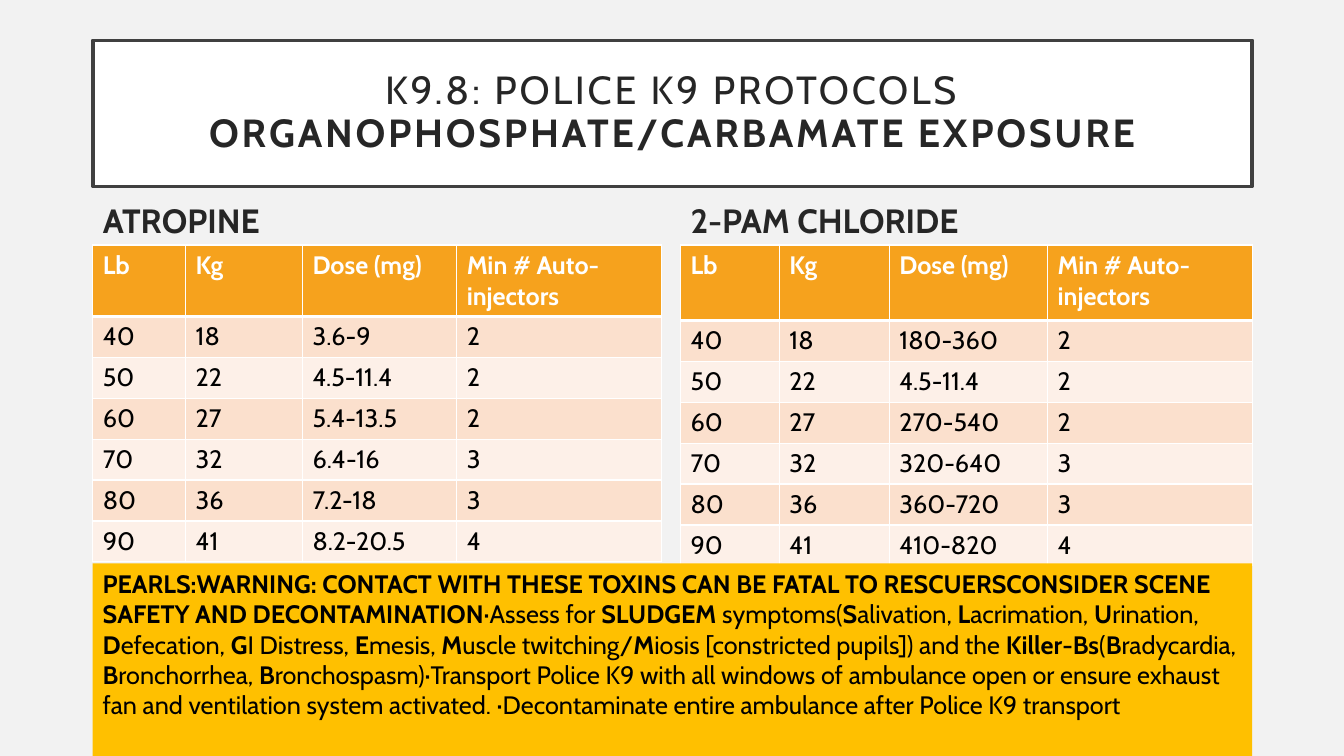
from copy import deepcopy
from dataclasses import dataclass

from lxml.etree import SubElement
from pptx import Presentation
from pptx.dml.color import RGBColor
from pptx.enum.shapes import MSO_SHAPE
from pptx.enum.text import MSO_ANCHOR as Anchor, MSO_AUTO_SIZE as AutoSize, PP_ALIGN as Align
from pptx.oxml.ns import qn
from pptx.util import Inches, Pt

WHITE = RGBColor(0xFF, 0xFF, 0xFF)
BLACK = RGBColor(0x00, 0x00, 0x00)
PALE_GREY = RGBColor(0xF2, 0xF2, 0xF2)
DARK_GREY = RGBColor(0x40, 0x40, 0x40)
INK = RGBColor(0x26, 0x26, 0x26)
ORANGE = RGBColor(0xF6, 0xA2, 0x1D)
AMBER = RGBColor(0xFF, 0xC0, 0x00)
BANDS = RGBColor(0xFB, 0xE0, 0xCD), RGBColor(0xFD, 0xF0, 0xE8)

LEFT, FULL_WIDTH = 0.92, 11.5
HEADING_TOP, HEADING_HEIGHT = 1.84, 0.59
TABLE_TOP, ROW_HEIGHT = 2.43, 0.4

TITLE_FORMAT = {"name": "Cabin", "size": Pt(28)}
HEADING_FORMAT = {"name": "Cabin", "size": Pt(24), "bold": True}
TEXT_FORMAT = {"name": "Cabin", "size": Pt(18)}

HEADER = ("Lb", "Kg", "Dose (mg)", "Min # Auto-injectors")
WEIGHTS = (("40", "18"), ("50", "22"), ("60", "27"), ("70", "32"), ("80", "36"), ("90", "41"))
INJECTORS = ("2", "2", "2", "3", "3", "4")

# Bold passages stand between asterisks
PEARLS = (
    "*PEARLS:WARNING: CONTACT WITH THESE TOXINS CAN BE FATAL TO RESCUERSCONSIDER SCENE "
    "SAFETY AND DECONTAMINATION*·Assess for *SLUDGEM *symptoms(*S*alivation, *L*acrimation, "
    "*U*rination, *D*efecation, *G*I Distress, *E*mesis, *M*uscle twitching/*M*iosis "
    "[constricted pupils]) and the *Killer-Bs*(*B*radycardia, *B*ronchorrhea, "
    "*B*ronchospasm)·Transport Police K9 with all windows of ambulance open or ensure exhaust "
    "fan and ventilation system activated. ·Decontaminate entire ambulance after Police K9 "
    "transport"
)


@dataclass(frozen=True)
class Drug:
    name: str
    placeholder: int
    left: float
    columns: tuple[float, ...]
    header_height: float
    doses: tuple[str, ...]


DRUGS = (
    Drug("ATROPINE", 1, LEFT, (0.92, 1.16, 1.53, 2.03), 0.7,
         ("3.6-9", "4.5-11.4", "5.4-13.5", "6.4-16", "7.2-18", "8.2-20.5")),
    Drug("2-PAM CHLORIDE", 3, 6.75, (0.98, 1.09, 1.57, 2.03), 0.75,
         ("180-360", "4.5-11.4", "270-540", "320-640", "360-720", "410-820")),
)


def place(shape, left: float, top: float, width: float, height: float) -> None:
    shape.left, shape.top = Inches(left), Inches(top)
    shape.width, shape.height = Inches(width), Inches(height)


def add_text(paragraph, text: str, color: RGBColor, formats: dict, bold: bool = False):
    run = paragraph.add_run()
    run.text = text
    for name, value in ({"bold": bold} | formats).items():
        setattr(run.font, name, value)
    run.font.color.rgb = color
    return run


def set_frame(frame, anchor: Anchor) -> None:
    for name, value in {"word_wrap": True, "auto_size": AutoSize.NONE,
                        "vertical_anchor": anchor}.items():
        setattr(frame, name, value)


def add_borders(cell, bottom: float) -> None:
    properties = cell._tc.get_or_add_tcPr()
    for side, width in (("L", 1), ("R", 1), ("T", 1), ("B", bottom)):
        line = SubElement(properties, qn(f"a:ln{side}"), w=str(Pt(width)))
        SubElement(SubElement(line, qn("a:solidFill")), qn("a:srgbClr"), val=str(WHITE))


def draw_title(slide) -> None:
    title = slide.shapes.title
    place(title, LEFT, 0.4, FULL_WIDTH, 1.45)
    title.fill.solid()
    title.fill.fore_color.rgb = WHITE
    title.line.color.rgb = DARK_GREY
    title.line.width = Pt(2.5)
    frame = title.text_frame
    set_frame(frame, Anchor.MIDDLE)
    for side in ("left", "right", "top", "bottom"):
        setattr(frame, f"margin_{side}", Inches(0.2))
    paragraph = frame.paragraphs[0]
    paragraph.alignment = Align.CENTER
    paragraph.line_spacing = 0.9
    first = add_text(paragraph, "K9.8: POLICE K9 PROTOCOLS", INK, TITLE_FORMAT)
    paragraph.add_line_break()
    second = add_text(paragraph, "ORGANOPHOSPHATE/CARBAMATE EXPOSURE", INK, TITLE_FORMAT, True)
    for run in (first, second):
        run.font._element.set("spc", "200")
    # The line break takes the size of the text around it
    paragraph._p.find(qn("a:br")).insert(0, deepcopy(first.font._element))


def draw_heading(slide, drug: Drug) -> None:
    heading = slide.placeholders[drug.placeholder]
    place(heading, drug.left, HEADING_TOP, sum(drug.columns), HEADING_HEIGHT)
    set_frame(heading.text_frame, Anchor.BOTTOM)
    paragraph = heading.text_frame.paragraphs[0]
    paragraph.space_before = Pt(0)
    add_text(paragraph, drug.name, INK, HEADING_FORMAT)


def draw_table(slide, drug: Drug) -> None:
    rows = [HEADER] + [(*weight, dose, count)
                       for weight, dose, count in zip(WEIGHTS, drug.doses, INJECTORS)]
    heights = [drug.header_height] + [ROW_HEIGHT] * len(WEIGHTS)
    table = slide.shapes.add_table(
        len(rows), len(HEADER), Inches(drug.left), Inches(TABLE_TOP),
        Inches(sum(drug.columns)), Inches(sum(heights))).table
    for column, width in zip(table.columns, drug.columns):
        column.width = Inches(width)
    for index, (values, height) in enumerate(zip(rows, heights)):
        is_header = index == 0
        table.rows[index].height = Inches(height)
        for cell, value in zip(table.rows[index].cells, values):
            add_borders(cell, 3 if is_header else 1)
            cell.fill.solid()
            cell.fill.fore_color.rgb = ORANGE if is_header else BANDS[(index - 1) % 2]
            add_text(cell.text_frame.paragraphs[0], value,
                     WHITE if is_header else BLACK, TEXT_FORMAT, is_header)


def draw_pearls(slide) -> None:
    box = slide.shapes.add_shape(MSO_SHAPE.RECTANGLE, Inches(LEFT), Inches(5.59),
                                 Inches(FULL_WIDTH), Inches(1.91))
    box.shadow.inherit = False
    box.fill.solid()
    box.fill.fore_color.rgb = AMBER
    box.line.fill.background()
    set_frame(box.text_frame, Anchor.TOP)
    paragraph = box.text_frame.paragraphs[0]
    paragraph.alignment = Align.LEFT
    for index, passage in enumerate(PEARLS.split("*")):
        if passage:
            add_text(paragraph, passage, BLACK, TEXT_FORMAT, index % 2 == 1)


def main() -> None:
    presentation = Presentation()
    presentation.slide_width, presentation.slide_height = Inches(13.33), Inches(7.5)
    slide = presentation.slides.add_slide(presentation.slide_layouts.get_by_name("Comparison"))
    slide.background.fill.solid()
    slide.background.fill.fore_color.rgb = PALE_GREY

    # Title and the two dose tables
    draw_title(slide)
    for drug in DRUGS:
        draw_heading(slide, drug)
        draw_table(slide, drug)

    # Warning box over the foot of the tables
    draw_pearls(slide)

    # Unused placeholders
    for placeholder in list(slide.placeholders):
        if not placeholder.text_frame.text:
            placeholder._element.getparent().remove(placeholder._element)
    presentation.save("out.pptx")


if __name__ == "__main__":
    main()
